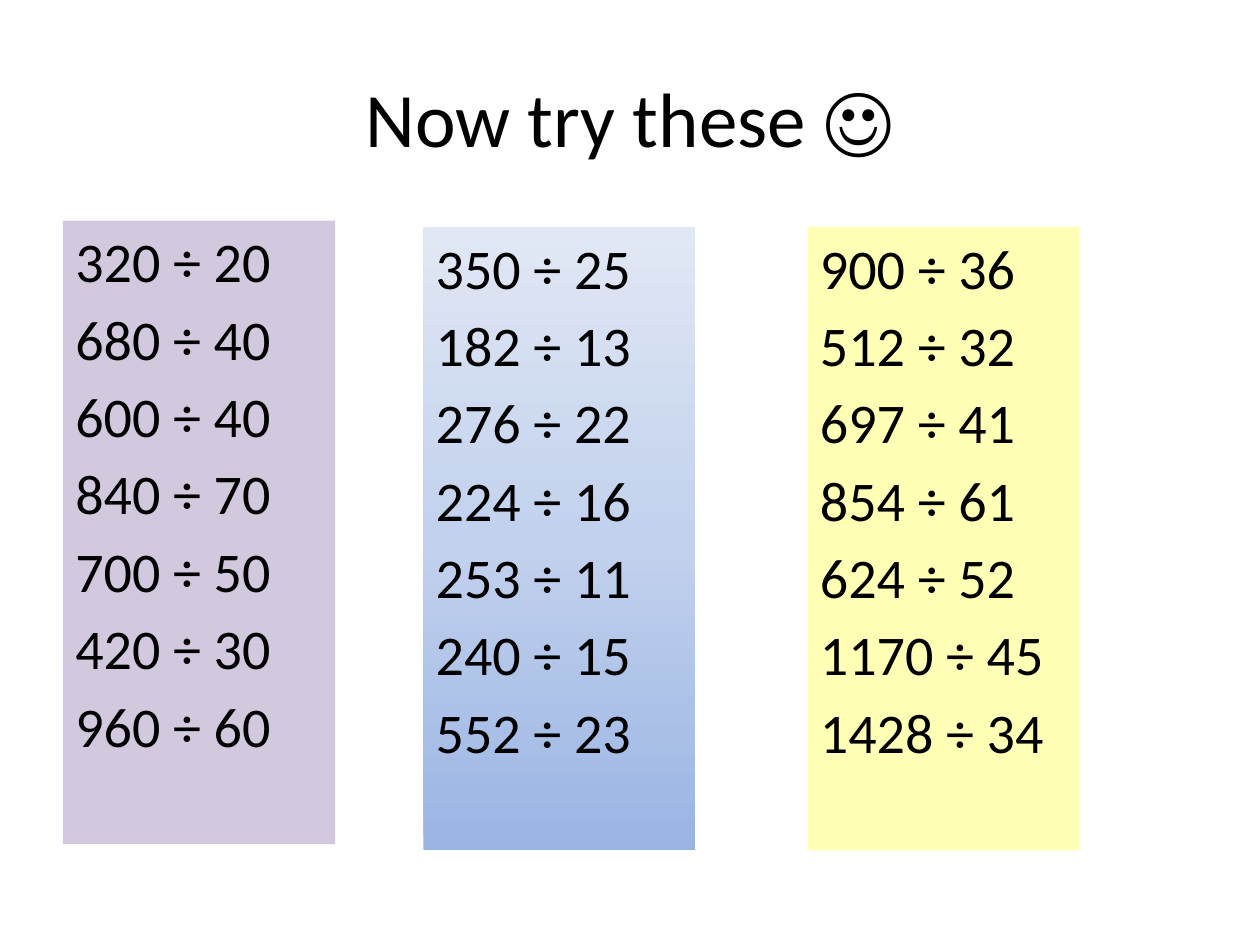
import copy
from dataclasses import dataclass

import pptx
import pptx.dml.color
import pptx.enum.shapes
import pptx.enum.text
import pptx.oxml
import pptx.oxml.ns
import pptx.util

Inches, Pt = pptx.util.Inches, pptx.util.Pt
Align, Anchor = pptx.enum.text.PP_ALIGN, pptx.enum.text.MSO_ANCHOR
qn = pptx.oxml.ns.qn


@dataclass(frozen=True)
class Theme:
    font: str = "Calibri"
    ink: str = "000000"
    head: int = 44
    body: int = 32
    gap: float = 5.8
    purple: tuple = ("B3A2C7", 58)
    yellow: tuple = ("FFFF00", 29)
    blue: tuple = ((0, "9AB5E4"), (50, "C2D1ED"), (100, "E1E8F5"))


THEME = Theme()


def rgb(code):
    return pptx.dml.color.RGBColor.from_string(code)


def put(obj, vals):
    for name, val in vals.items():
        setattr(obj, name, val)


def write(par, text, size):
    run = par.add_run()
    run.text = text
    put(run.font, {"name": THEME.font, "size": Pt(size)})
    run.font.color.rgb = rgb(THEME.ink)


def tint(shape, look):
    """Fill with one colour at a percentage of opacity."""
    code, alpha = look
    shape.fill.solid()
    shape.fill.fore_color.rgb = rgb(code)
    clr = shape._element.spPr.find(qn("a:solidFill"))[0]
    clr.append(clr.makeelement(qn("a:alpha"), {"val": str(alpha * 1000)}))


def fade(shape, stops):
    """Fill with a gradient that runs from the bottom to the top."""
    shape.fill.gradient()
    shape.fill.gradient_angle = 90
    row = shape._element.spPr.find(qn("a:gradFill")).find(qn("a:gsLst"))
    while len(row) < len(stops):
        row.append(copy.deepcopy(row[-1]))
    for stop, (pos, code) in zip(shape.fill.gradient_stops, stops):
        stop.position = pos / 100
        stop.color.rgb = rgb(code)


def title(slide, box, text):
    frame = slide.shapes.add_textbox(*map(Inches, box)).text_frame
    put(frame, {"word_wrap": True, "vertical_anchor": Anchor.MIDDLE})
    par = frame.paragraphs[0]
    par.alignment = Align.CENTER
    write(par, text, THEME.head)


def panel(slide, box, sums, paint, look):
    rect = pptx.enum.shapes.MSO_SHAPE.RECTANGLE
    shape = slide.shapes.add_shape(rect, *map(Inches, box))
    shape.shadow.inherit = False
    shape.line.fill.background()
    paint(shape, look)
    frame = shape.text_frame
    put(frame, {"word_wrap": True, "vertical_anchor": Anchor.TOP})
    hang = Inches(0.38)
    for i, (top, low) in enumerate(sums):
        par = frame.add_paragraph() if i else frame.paragraphs[0]
        put(par, {"alignment": Align.LEFT, "space_before": Pt(THEME.gap)})
        props = par._p.get_or_add_pPr()
        props.set("marL", str(hang))
        props.set("indent", str(-hang))
        write(par, f"{top} ÷ {low}", THEME.body)


PANELS = [
    (0.5, 1.75, tint, THEME.purple,
     [(320, 20), (680, 40), (600, 40), (840, 70), (700, 50), (420, 30), (960, 60)]),
    (3.36, 1.8, fade, THEME.blue,
     [(350, 25), (182, 13), (276, 22), (224, 16), (253, 11), (240, 15), (552, 23)]),
    (6.41, 1.8, tint, THEME.yellow,
     [(900, 36), (512, 32), (697, 41), (854, 61), (624, 52), (1170, 45), (1428, 34)]),
]


def main():
    deck = pptx.Presentation()
    put(deck, {"slide_width": Inches(10), "slide_height": Inches(7.5)})
    slide = deck.slides.add_slide(deck.slide_layouts[6])
    title(slide, (0.5, 0.3, 9, 1.25), "Now try these ☺")
    for left, top, paint, look, sums in PANELS:
        panel(slide, (left, top, 2.16, 4.95), sums, paint, look)
    deck.save("out.pptx")


if __name__ == "__main__":
    main()
